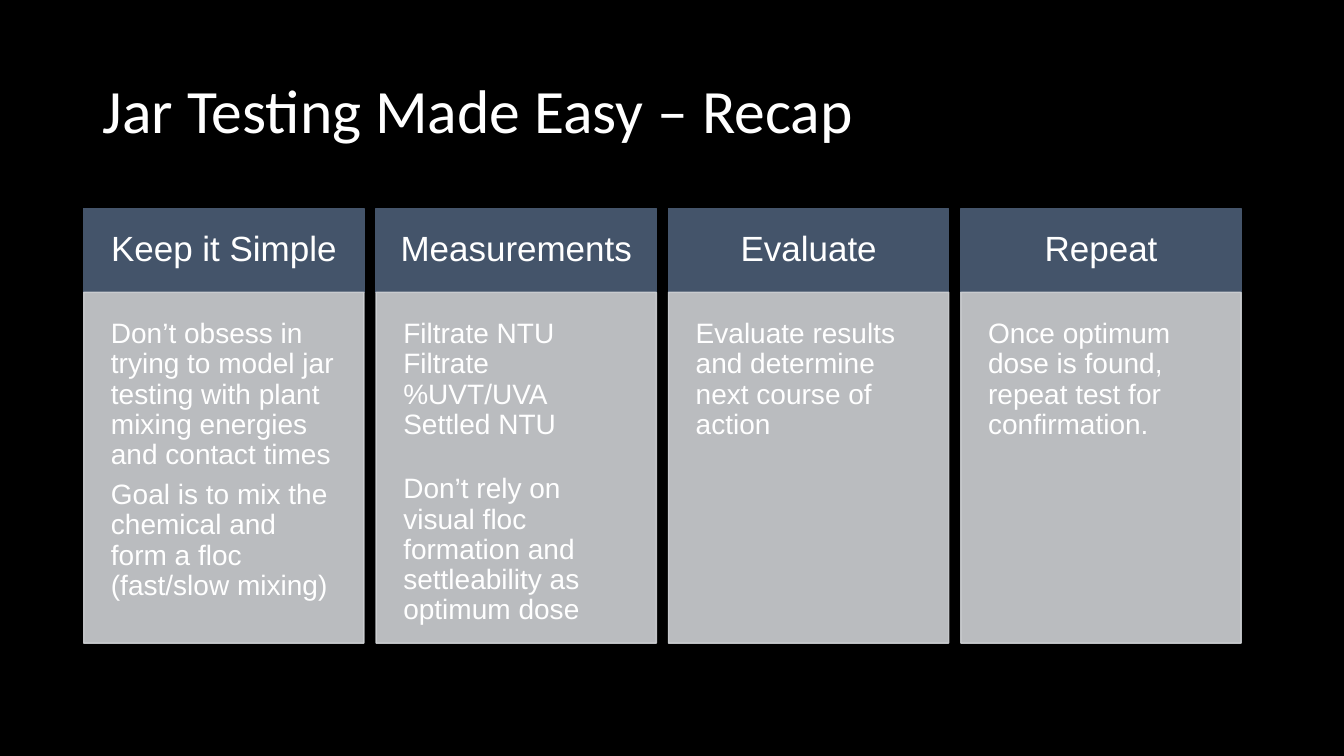
from pptx import Presentation
from pptx.dml.color import RGBColor
from pptx.enum import shapes, text
from pptx.oxml.ns import qn
from pptx.util import Inches, Pt
from lxml import etree

# Content: each body paragraph is (text, space after in points)
TITLE = "Jar Testing Made Easy – Recap"
COLUMNS = [
    ("Keep it Simple", [
        ("Don’t obsess in trying to model jar testing with plant mixing energies and contact times", 7),
        ("Goal is to mix the chemical and form a floc (fast/slow mixing)", 7),
    ]),
    ("Measurements", [
        ("Filtrate NTU", 0),
        ("Filtrate %UVT/UVA Settled NTU", 24.5),
        ("Don’t rely on visual floc formation and settleability as optimum dose", 3),
    ]),
    ("Evaluate", [("Evaluate results and determine next course of action", 7)]),
    ("Repeat", [("Once optimum dose is found, repeat test for confirmation.", 7)]),
]

THEME = {
    "background": RGBColor.from_string("000000"),
    "text": RGBColor.from_string("FFFFFF"),
    "header": RGBColor.from_string("44546A"),
    "body": RGBColor.from_string("CFD1D4"),
    "body_opacity": 90,
    "title_font": "Calibri", "column_font": "Arial",
    "title_size": 44, "header_size": 25, "body_size": 20,
}

# Column grid, in inches
LEFT, TOP, PITCH, WIDTH = 0.83, 2.07, 2.9, 2.78
HEADER_HEIGHT, BODY_HEIGHT = 0.83, 3.48


def write(shape, paragraphs, size, font, anchor, alignment, inset):
    frame = shape.text_frame
    frame.word_wrap = True
    frame.vertical_anchor = anchor
    frame.margin_left = frame.margin_right = Inches(inset)
    frame.margin_top = frame.margin_bottom = Inches(inset)
    for index, (words, space_after) in enumerate(paragraphs):
        paragraph = frame.paragraphs[0] if index == 0 else frame.add_paragraph()
        paragraph.text = words
        paragraph.alignment = alignment
        paragraph.line_spacing = 0.9
        paragraph.space_after = Pt(space_after)
        paragraph.font.size = Pt(size)
        paragraph.font.name = font
        paragraph.font.color.rgb = THEME["text"]


def add_panel(slide, left, top, height, color, opacity=100):
    shape = slide.shapes.add_shape(
        shapes.MSO_SHAPE.RECTANGLE,
        Inches(left), Inches(top), Inches(WIDTH), Inches(height))
    shape.shadow.inherit = False
    shape.fill.solid()
    shape.fill.fore_color.rgb = color
    shape.line.color.rgb = color
    shape.line.width = Pt(1)
    if opacity < 100:
        for color_element in shape.element.spPr.iter(qn("a:srgbClr")):
            etree.SubElement(color_element, qn("a:alpha"), val=str(opacity * 1000))
    return shape


def main():
    presentation = Presentation()
    presentation.slide_width = Inches(13.33)
    presentation.slide_height = Inches(7.5)
    slide = presentation.slides.add_slide(presentation.slide_layouts[6])
    slide.background.fill.solid()
    slide.background.fill.fore_color.rgb = THEME["background"]

    # Title
    title = slide.shapes.add_textbox(Inches(0.92), Inches(0.4), Inches(11.5), Inches(1.45))
    write(title, [(TITLE, 0)], THEME["title_size"], THEME["title_font"],
          text.MSO_ANCHOR.MIDDLE, text.PP_ALIGN.LEFT, 0.1)

    # Columns: a header above a translucent body
    for index, (heading, paragraphs) in enumerate(COLUMNS):
        left = LEFT + index * PITCH
        header = add_panel(slide, left, TOP, HEADER_HEIGHT, THEME["header"])
        write(header, [(heading, 0)], THEME["header_size"], THEME["column_font"],
              text.MSO_ANCHOR.MIDDLE, text.PP_ALIGN.CENTER, 0.22)
        body = add_panel(slide, left, TOP + HEADER_HEIGHT, BODY_HEIGHT,
                         THEME["body"], THEME["body_opacity"])
        write(body, paragraphs, THEME["body_size"], THEME["column_font"],
              text.MSO_ANCHOR.TOP, text.PP_ALIGN.LEFT, 0.27)

    presentation.save("out.pptx")


if __name__ == "__main__":
    main()
